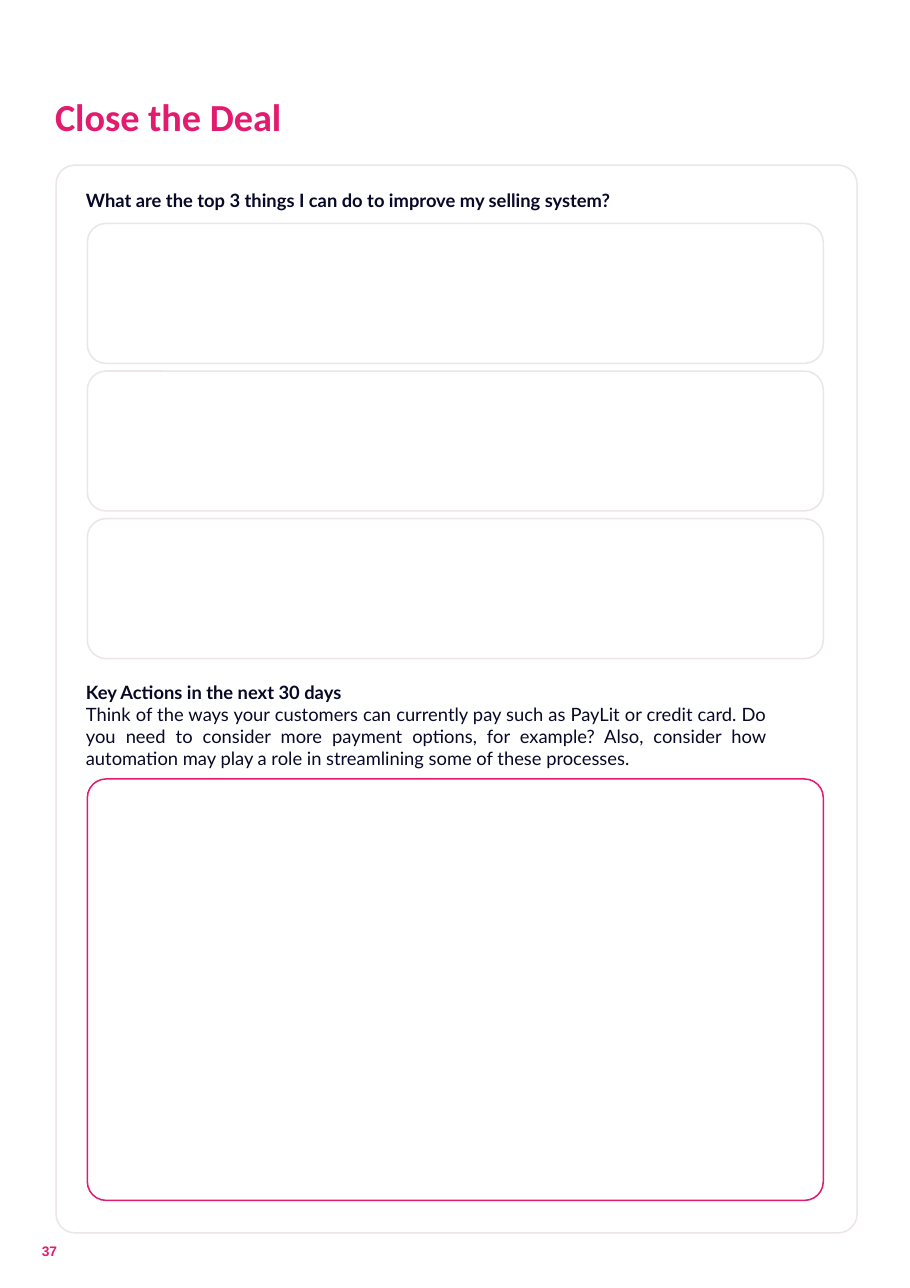
from dataclasses import dataclass

from pptx import Presentation
from pptx.dml.color import RGBColor
from pptx.enum.shapes import MSO_SHAPE
from pptx.enum.text import PP_ALIGN
from pptx.util import Inches, Length, Pt

ROUND = MSO_SHAPE.ROUNDED_RECTANGLE
LEFT = PP_ALIGN.LEFT
JUST = PP_ALIGN.JUSTIFY


@dataclass(frozen=True)
class Theme:
    pink: str = "E21B6F"
    navy: str = "080827"
    grey: str = "ECE6E6"
    head: float = 25
    body: float = 12
    small: float = 9


@dataclass(frozen=True)
class Area:
    """Place and size as percent of the slide."""
    x: float
    y: float
    w: float
    h: float


@dataclass(frozen=True)
class Panel:
    area: Area
    color: str


THEME = Theme()
WIDE, HIGH = Inches(8.26), Inches(11.69)
CURVE = Inches(0.17)

# Panels: outer frame, three answer boxes, action box
BOX_X, BOX_W = 9.6, 80.87
BOX_Y, BOX_H, STEP = 17.35, 10.86, 11.46
PANELS = [
    Panel(Area(6.17, 12.82, 88.01, 82.9), THEME.grey),
    *[Panel(Area(BOX_X, BOX_Y + i * STEP, BOX_W, BOX_H), THEME.grey)
      for i in range(3)],
    Panel(Area(BOX_X, 60.48, BOX_W, 32.72), THEME.pink),
]

TITLE = "Close the Deal"
QUERY = "What are the top 3 things I can do to improve my selling system?"
ACTION = "Key Actions in the next 30 days"
ADVICE = ("Think of the ways your customers can currently pay such as PayLit or "
          "credit card. Do you need to consider more payment options, for example? "
          "Also, consider how automation may play a role in streamlining some of "
          "these processes.")

deck = Presentation()
deck.slide_width, deck.slide_height = WIDE, HIGH
page = deck.slides.add_slide(deck.slide_layouts[6])


def place(area: Area) -> tuple[Length, ...]:
    """Turn shares of the slide into lengths."""
    return (Length(WIDE * area.x / 100), Length(HIGH * area.y / 100),
            Length(WIDE * area.w / 100), Length(HIGH * area.h / 100))


def draw(panel: Panel) -> None:
    shape = page.shapes.add_shape(ROUND, *place(panel.area))
    shape.shadow.inherit = False
    shape.adjustments[0] = CURVE / min(shape.width, shape.height)
    shape.fill.background()
    shape.line.color.rgb = RGBColor.from_string(panel.color)
    shape.line.width = Pt(1)


def write(area: Area, *lines: str, size: float, color: str,
          font: str = "Lato", align: PP_ALIGN = LEFT) -> None:
    """Write paragraphs, the first of them bold."""
    frame = page.shapes.add_textbox(*place(area)).text_frame
    frame.word_wrap = True
    frame.margin_left = frame.margin_right = 0
    frame.margin_top = frame.margin_bottom = 0
    for i, line in enumerate(lines):
        para = frame.paragraphs[0] if i == 0 else frame.add_paragraph()
        para.alignment = align
        run = para.add_run()
        run.text = line
        run.font.name = font
        run.font.size = Pt(size)
        run.font.bold = i == 0
        run.font.color.rgb = RGBColor.from_string(color)


for panel in PANELS:
    draw(panel)

# Heading, prompts and page number
write(Area(6.05, 7.22, 66.22, 3.76), TITLE,
      size=THEME.head, color=THEME.pink, font="Calibri")
write(Area(9.44, 14.67, 61.5, 1.97), QUERY,
      size=THEME.body, color=THEME.navy)
write(Area(9.44, 52.9, 74.82, 7.1), ACTION, ADVICE,
      size=THEME.body, color=THEME.navy, align=JUST)
write(Area(4.6, 96.49, 2.66, 1.28), "37",
      size=THEME.small, color=THEME.pink, font="Arial")

deck.save("out.pptx")
